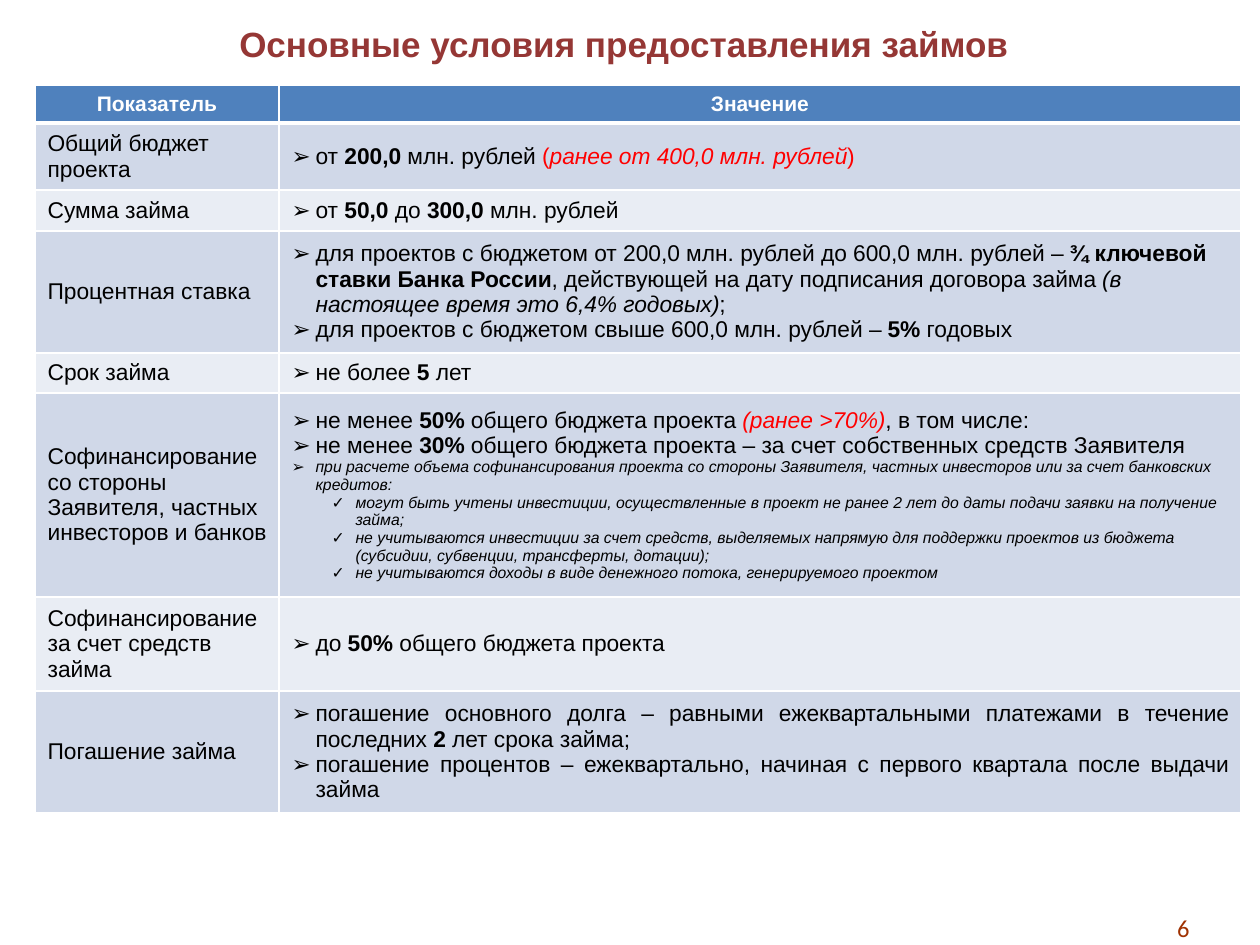
from dataclasses import dataclass

from pptx import Presentation, util as u
from pptx.dml.color import RGBColor
from pptx.enum import text
from pptx.oxml import parse_xml
from pptx.oxml.ns import nsdecls

PX = 914400 // 126  # EMU in one px


@dataclass(frozen=True)
class Theme:
    title: str = "953735"
    number: str = "A03202"
    header: str = "4F81BD"
    bands: tuple = ("D0D8E8", "E9EDF4")
    white: str = "FFFFFF"
    ink: str = "000000"
    accent: str = "FF0000"
    font: str = "Arial"
    number_font: str = "Calibri"
    title_size: int = 20
    number_size: int = 14
    header_size: int = 12
    body_size: int = 13
    note_size: int = 9


theme = Theme()
LEFT, CENTER = text.PP_ALIGN.LEFT, text.PP_ALIGN.CENTER
RIGHT, JUSTIFY = text.PP_ALIGN.RIGHT, text.PP_ALIGN.JUSTIFY


def style(font, size, color, bold=False, italic=False, name=theme.font):
    font.name, font.size = name, u.Pt(size)
    font.bold, font.italic = bold, italic
    font.color.rgb = RGBColor.from_string(color)


def prepare_cell(cell, fill, bottom=1):
    """Borders come before the fill in the cell properties."""
    cell.vertical_anchor = text.MSO_ANCHOR.MIDDLE
    properties = cell._tc.get_or_add_tcPr()
    for side, width in zip("LRTB", (1, 1, 1, bottom)):
        properties.append(parse_xml(
            f'<a:ln{side} {nsdecls("a")} w="{u.Pt(width)}"><a:solidFill>'
            f'<a:srgbClr val="{theme.white}"/></a:solidFill></a:ln{side}>'))
    cell.fill.solid()
    cell.fill.fore_color.rgb = RGBColor.from_string(fill)


# Paragraph kinds: bullet, left indent in px, type size, alignment
KINDS = {
    "item": ("➢", 24, theme.body_size, LEFT),
    "justified": ("➢", 24, theme.body_size, JUSTIFY),
    "note": ("➢", 24, theme.note_size, LEFT),
    "subnote": ("✓", 64, theme.note_size, LEFT),
}
HANGING = 24

# Rows: height in px, indicator, value paragraphs.
# A run is (text, flags): b bold, i italic, r accent colour
conditions = [
    (67, "Общий бюджет проекта", [
        ("item", [("от ", ""), ("200,0 ", "b"), ("млн. рублей ", ""), ("(", "r"),
                  ("ранее от 400,0 млн. рублей", "ri"), (")", "r")])]),
    (41, "Сумма займа", [
        ("item", [("от ", ""), ("50,0", "b"), (" до ", ""), ("300,0", "b"),
                  (" млн. рублей", "")])]),
    (122, "Процентная ставка", [
        ("item", [("для проектов с бюджетом от 200,0 млн. рублей до 600,0 млн. рублей – ", ""),
                  ("¾ ключевой ставки Банка России", "b"),
                  (", действующей на дату подписания договора займа ", ""),
                  ("(в настоящее время это 6,4% годовых)", "i"), (";", "")]),
        ("item", [("для проектов с бюджетом свыше 600,0 млн. рублей – ", ""),
                  ("5%", "b"), (" годовых", "")])]),
    (40, "Срок займа", [
        ("item", [("не более ", ""), ("5", "b"), (" лет", "")])]),
    (204, "Софинансирование\nсо стороны Заявителя, частных инвесторов и банков", [
        ("item", [("не менее ", ""), ("50% ", "b"), ("общего бюджета проекта ", ""),
                  ("(ранее >70%)", "ri"), (", в том числе:", "")]),
        ("item", [("не менее ", ""), ("30%", "b"),
                  (" общего бюджета проекта – за счет собственных средств Заявителя", "")]),
        ("note", [("при расчете объема софинансирования проекта со стороны Заявителя, "
                   "частных инвесторов или за счет банковских кредитов:", "i")]),
        ("subnote", [("могут быть учтены инвестиции, осуществленные в проект не ранее 2 лет "
                      "до даты подачи заявки на получение займа;", "i")]),
        ("subnote", [("не учитываются инвестиции за счет средств, выделяемых напрямую для "
                      "поддержки проектов из бюджета (субсидии, субвенции, трансферты, "
                      "дотации);", "i")]),
        ("subnote", [("не учитываются доходы в виде денежного потока, генерируемого "
                      "проектом", "i")])]),
    (94, "Софинансирование за счет средств займа", [
        ("justified", [("до ", ""), ("50%", "b"), (" общего бюджета проекта", "")])]),
    (122, "Погашение займа", [
        ("justified", [("погашение основного долга – равными ежеквартальными платежами "
                        "в течение последних ", ""), ("2", "b"), (" лет срока займа;", "")]),
        ("justified", [("погашение процентов – ежеквартально, начиная с первого квартала "
                        "после выдачи займа", "")])]),
]
HEADER_HEIGHT = 38
COLUMN_WIDTHS = (244, 962)

deck = Presentation()
deck.slide_width, deck.slide_height = u.Inches(10), u.Inches(7.5)
slide = deck.slides.add_slide(deck.slide_layouts[5])

# Title
title = slide.shapes.title
title.left, title.top, title.width, title.height = (v * PX for v in (64, 16, 1120, 55))
title.text_frame.text = "Основные условия предоставления займов"
title.text_frame.vertical_anchor = text.MSO_ANCHOR.TOP
title.text_frame.paragraphs[0].alignment = CENTER
style(title.text_frame.paragraphs[0].runs[0].font, theme.title_size, theme.title, bold=True)

# Table of loan conditions
table_height = HEADER_HEIGHT + sum(height for height, _, _ in conditions)
table = slide.shapes.add_table(
    len(conditions) + 1, 2, 35 * PX, 85 * PX,
    sum(COLUMN_WIDTHS) * PX, table_height * PX).table
for column, width in zip(table.columns, COLUMN_WIDTHS):
    column.width = width * PX

# Header row
table.rows[0].height = HEADER_HEIGHT * PX
for cell, heading in zip(table.rows[0].cells, ("Показатель", "Значение")):
    prepare_cell(cell, theme.header, bottom=3)
    cell.text_frame.text = heading
    paragraph = cell.text_frame.paragraphs[0]
    paragraph.alignment = CENTER
    style(paragraph.runs[0].font, theme.header_size, theme.white, bold=True)

# Body rows
for index, (height, indicator, values) in enumerate(conditions):
    row = table.rows[index + 1]
    row.height = height * PX
    indicator_cell, value_cell = row.cells
    for cell in (indicator_cell, value_cell):
        prepare_cell(cell, theme.bands[index % 2])

    indicator_cell.text_frame.text = indicator
    for paragraph in indicator_cell.text_frame.paragraphs:
        style(paragraph.runs[0].font, theme.body_size, theme.ink)

    frame = value_cell.text_frame
    for number, (kind, runs) in enumerate(values):
        bullet, indent, size, alignment = KINDS[kind]
        paragraph = frame.add_paragraph() if number else frame.paragraphs[0]
        paragraph.alignment = alignment
        properties = paragraph._p.get_or_add_pPr()
        properties.set("marL", str(indent * PX))
        properties.set("indent", str(-HANGING * PX))
        properties.append(parse_xml(f'<a:buFont {nsdecls("a")} typeface="{theme.font}"/>'))
        properties.append(parse_xml(f'<a:buChar {nsdecls("a")} char="{bullet}"/>'))
        for words, flags in runs:
            run = paragraph.add_run()
            run.text = words
            style(run.font, size, theme.accent if "r" in flags else theme.ink,
                  "b" in flags, "i" in flags)

# Page number
page = slide.shapes.add_textbox(1057 * PX, 903 * PX, 145 * PX, 50 * PX).text_frame
page.word_wrap = True
page.vertical_anchor = text.MSO_ANCHOR.MIDDLE
page.text = "6"
page.paragraphs[0].alignment = RIGHT
style(page.paragraphs[0].runs[0].font, theme.number_size, theme.number,
      name=theme.number_font)

deck.save("out.pptx")
